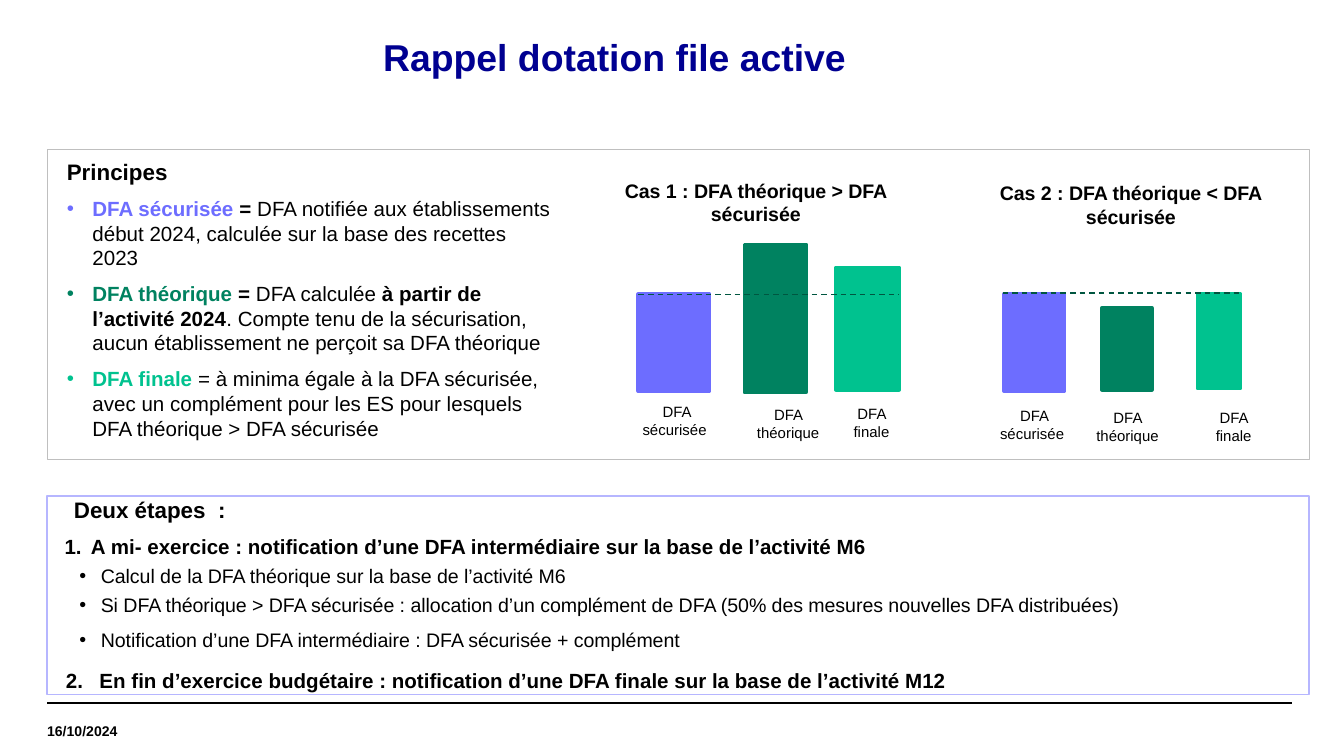
from dataclasses import dataclass

from lxml import etree
from pptx import Presentation
from pptx.dml.color import RGBColor
from pptx.enum.dml import MSO_LINE
from pptx.enum.shapes import MSO_CONNECTOR, MSO_SHAPE
from pptx.enum.text import MSO_ANCHOR, PP_ALIGN
from pptx.oxml.ns import qn
from pptx.util import Pt

PX = 9144
RECT, ROUND = MSO_SHAPE.RECTANGLE, MSO_SHAPE.ROUNDED_RECTANGLE
LINE, DASH = MSO_CONNECTOR.STRAIGHT, MSO_LINE.DASH
LEFT, CENTER = PP_ALIGN.LEFT, PP_ALIGN.CENTER
TOP, MIDDLE = MSO_ANCHOR.TOP, MSO_ANCHOR.MIDDLE


@dataclass(frozen=True)
class Theme:
    font: str = "Arial"
    ink: str = "000000"
    title: str = "000091"
    base: str = "6D6DFF"
    theory: str = "008260"
    final: str = "00C28F"
    mark: str = "005640"
    frame: str = "BFBFBF"
    border: str = "B6B6FF"
    huge: float = 20
    head: float = 12
    body: float = 11
    item: float = 10.5
    label: float = 8
    date: float = 7.5


T = Theme()


@dataclass(frozen=True)
class Box:
    x: int
    y: int
    w: int
    h: int

    def emu(self) -> tuple:
        return tuple(v * PX for v in (self.x, self.y, self.w, self.h))


@dataclass(frozen=True)
class Run:
    text: str
    bold: bool = False
    color: str = T.ink


@dataclass(frozen=True)
class Para:
    runs: tuple
    size: float
    align: int = LEFT
    margin: int = 0
    indent: int = 0
    bullet: str = ""
    number: int = 0
    before: float = 0
    after: float = 0
    spacing: float = 1.0


@dataclass(frozen=True)
class Bar:
    box: Box
    color: str
    text: str
    label: Box


@dataclass(frozen=True)
class Case:
    title: str
    head: Box
    bars: tuple
    level: tuple


def rgb(code: str) -> RGBColor:
    return RGBColor.from_string(code)


def write(frame, paras, anchor=TOP, inset=None) -> None:
    frame.word_wrap = True
    frame.vertical_anchor = anchor
    if inset is not None:
        frame.margin_left = frame.margin_right = inset * PX
        frame.margin_top = frame.margin_bottom = inset * PX
    for i, para in enumerate(paras):
        p = frame.add_paragraph() if i else frame.paragraphs[0]
        props = p._p.get_or_add_pPr()
        props.set("marL", str(para.margin * PX))
        props.set("indent", str(para.indent * PX))
        if para.number:
            etree.SubElement(props, qn("a:buAutoNum"), type="arabicPeriod",
                             startAt=str(para.number))
        elif para.bullet:
            etree.SubElement(props, qn("a:buFont"), typeface=T.font)
            etree.SubElement(props, qn("a:buChar"), char=para.bullet)
        p.alignment = para.align
        p.line_spacing = para.spacing
        p.space_before, p.space_after = Pt(para.before), Pt(para.after)
        first = para.runs[0]
        p.font.name, p.font.size = T.font, Pt(para.size)
        p.font.bold = first.bold
        p.font.color.rgb = rgb(first.color)
        for part in para.runs:
            run = p.add_run()
            run.text = part.text
            if part.bold != first.bold:
                run.font.bold = part.bold
            if part.color != first.color:
                run.font.color.rgb = rgb(part.color)


def text(slide, box: Box, para: Para, anchor=TOP, inset=None) -> None:
    write(slide.shapes.add_textbox(*box.emu()).text_frame, [para], anchor, inset)


def shape(slide, box: Box, kind=RECT, fill="", line="", width=1.0):
    item = slide.shapes.add_shape(kind, *box.emu())
    item.shadow.inherit = False
    if fill:
        item.fill.solid()
        item.fill.fore_color.rgb = rgb(fill)
    else:
        item.fill.background()
    if line:
        item.line.color.rgb = rgb(line)
        item.line.width = Pt(width)
    else:
        item.line.fill.background()
    return item


def rule(slide, start: int, end: int, y: int, color: str, width: float, dash=None) -> None:
    item = slide.shapes.add_connector(LINE, start * PX, y * PX, end * PX, y * PX)
    etree.SubElement(item._element.spPr, qn("a:effectLst"))
    item.line.color.rgb = rgb(color)
    item.line.width = Pt(width)
    if dash:
        item.line.dash_style = dash


def draw(slide, case: Case) -> None:
    for bar in case.bars:
        shape(slide, bar.box, fill=bar.color, line=bar.color, width=2)
        text(slide, bar.label, Para((Run(bar.text),), T.label, CENTER))
    rule(slide, *case.level, T.mark, 0.75, DASH)
    text(slide, case.head, Para((Run(case.title, True),), T.item, CENTER))


def point(*runs: Run) -> Para:
    return Para(runs, T.body, margin=19, indent=-19, bullet="•", after=6)


def step(words: str, number: int, margin: int, indent: int) -> Para:
    return Para((Run(words, True),), T.body, margin=margin, indent=indent,
                number=number, before=6)


def item(words: str, before: float = 3) -> Para:
    return Para((Run(words),), T.item, margin=40, indent=-16, bullet="•",
                before=before, after=3)


BASE, THEORY, FINAL = "DFA sécurisée ", "DFA théorique", "DFA finale"

CASES = (
    Case("Cas 1 : DFA théorique > DFA sécurisée", Box(426, 128, 273, 45), (
        Bar(Box(475, 219, 53, 72), T.base, BASE, Box(464, 295, 79, 37)),
        Bar(Box(554, 182, 46, 110), T.theory, THEORY, Box(551, 297, 71, 37)),
        Bar(Box(622, 199, 47, 91), T.final, FINAL, Box(615, 296, 67, 37)),
    ), (475, 669, 219)),
    Case("Cas 2 : DFA théorique < DFA sécurisée", Box(716, 130, 251, 45), (
        Bar(Box(747, 219, 45, 72), T.base, BASE, Box(729, 298, 81, 37)),
        Bar(Box(820, 229, 37, 61), T.theory, THEORY, Box(800, 299, 78, 37)),
        Bar(Box(891, 219, 32, 70), T.final, FINAL, Box(886, 299, 64, 37)),
    ), (746, 924, 218)),
)

RULES = (
    Para((Run("Principes", True),), T.head, after=6),
    point(Run("DFA sécurisée ", True, T.base), Run("= ", True),
          Run("DFA notifiée aux établissements début 2024, calculée sur la base des recettes 2023")),
    point(Run("DFA théorique ", True, T.theory), Run("= ", True), Run("DFA calculée "),
          Run("à partir de l’activité 2024", True),
          Run(". Compte tenu de la sécurisation, aucun établissement ne perçoit sa DFA théorique")),
    point(Run("DFA finale", True, T.final),
          Run(" = à minima égale à la DFA sécurisée, avec un complément pour les ES "
              "pour lesquels DFA théorique > DFA sécurisée")),
)

STEPS = (
    Para((Run("Deux étapes  :", True),), T.head, margin=20),
    step(" A mi- exercice : notification d’une DFA intermédiaire sur la base de l’activité M6", 1, 29, -16),
    item("Calcul de la DFA théorique sur la base de l’activité M6"),
    item("Si DFA théorique > DFA sécurisée : allocation d’un complément de DFA "
         "(50% des mesures nouvelles DFA distribuées)", 0),
    item("Notification d’une DFA intermédiaire : DFA sécurisée + complément"),
    step("En fin d’exercice budgétaire : notification d’une DFA finale sur la base de l’activité M12", 2, 39, -25),
)


def main() -> None:
    deck = Presentation()
    deck.slide_width = 1000 * PX
    deck.slide_height = deck.slide_width * 9 // 16
    slide = deck.slides.add_slide(deck.slide_layouts[5])
    title = slide.shapes.title
    title.left, title.top, title.width, title.height = Box(273, 15, 728, 59).emu()
    write(title.text_frame, [Para((Run("Rappel dotation file active", True, T.title),),
                                  T.huge, margin=2, spacing=0.9)], MIDDLE)
    for start in (35, 39):
        rule(slide, start, start + 922, 523, T.ink, 0.8)
    text(slide, Box(35, 525, 132, 38), Para((Run("16/10/2024", True),), T.date), MIDDLE, 0)
    write(shape(slide, Box(30, 121, 401, 203), ROUND).text_frame, RULES, MIDDLE)
    for case in CASES:
        draw(slide, case)
    panel = shape(slide, Box(35, 369, 939, 148), line=T.border, width=0.75)
    write(panel.text_frame, STEPS, TOP, 0)
    shape(slide, Box(35, 111, 939, 231), line=T.frame, width=0.25)
    deck.save("out.pptx")


if __name__ == "__main__":
    main()
